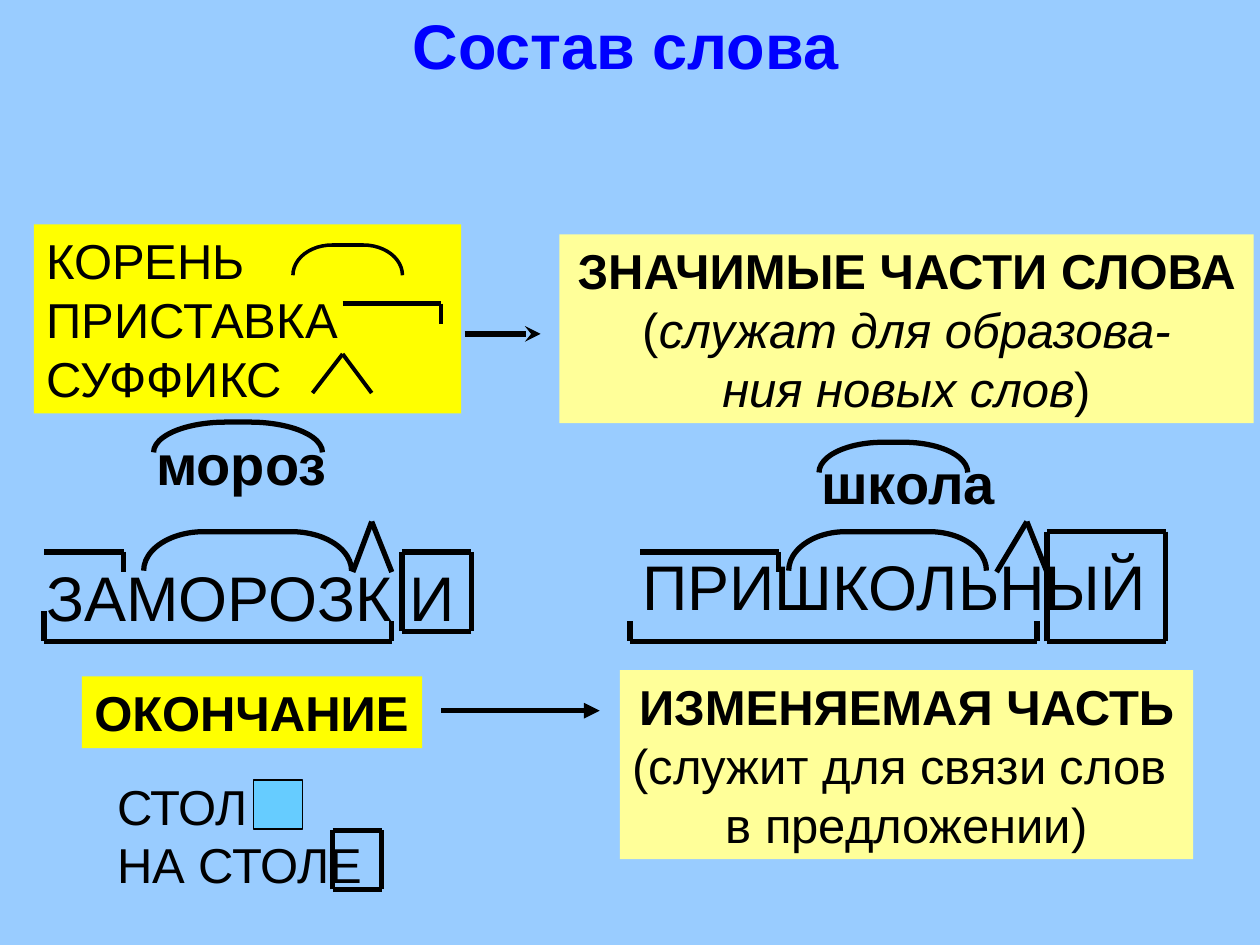
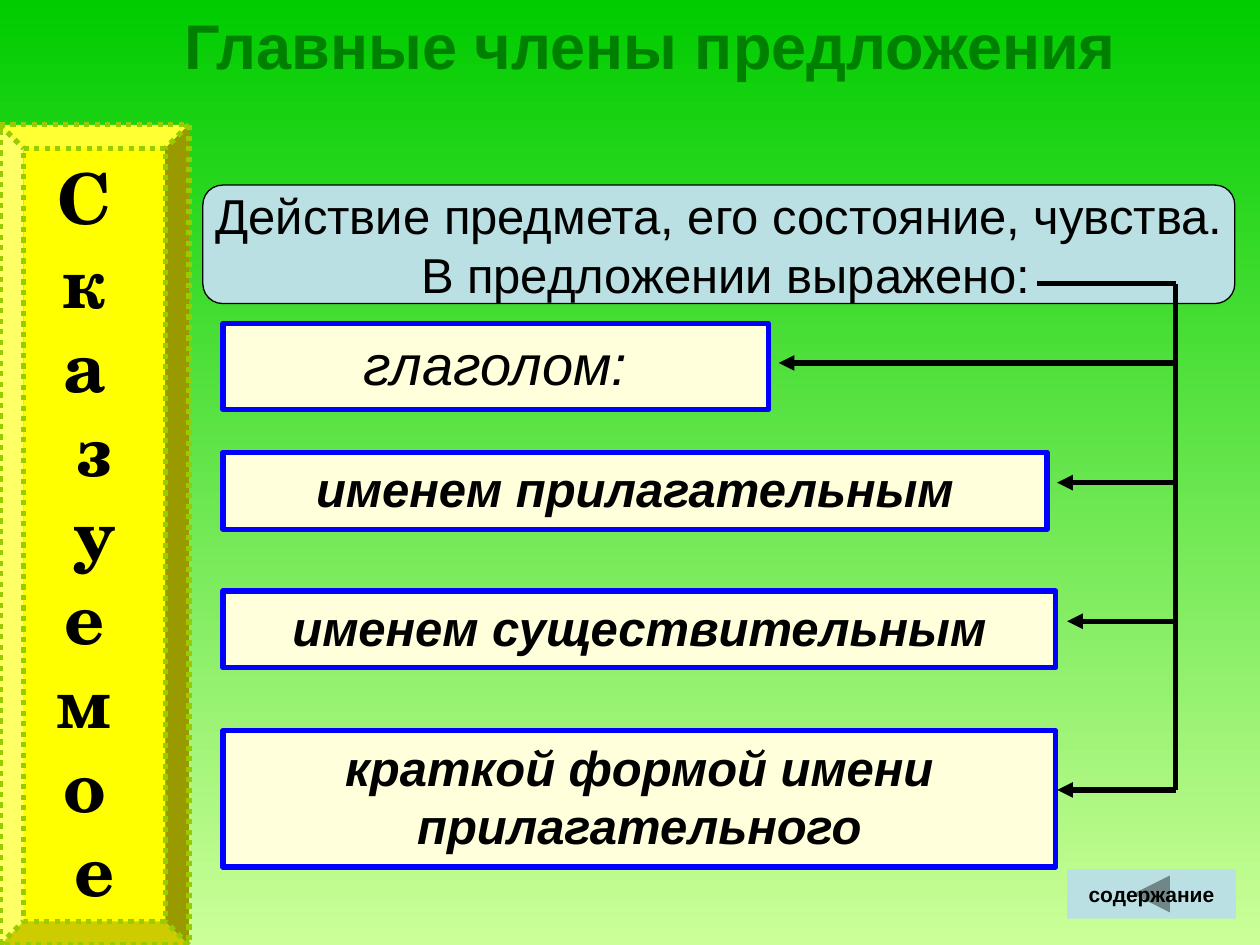
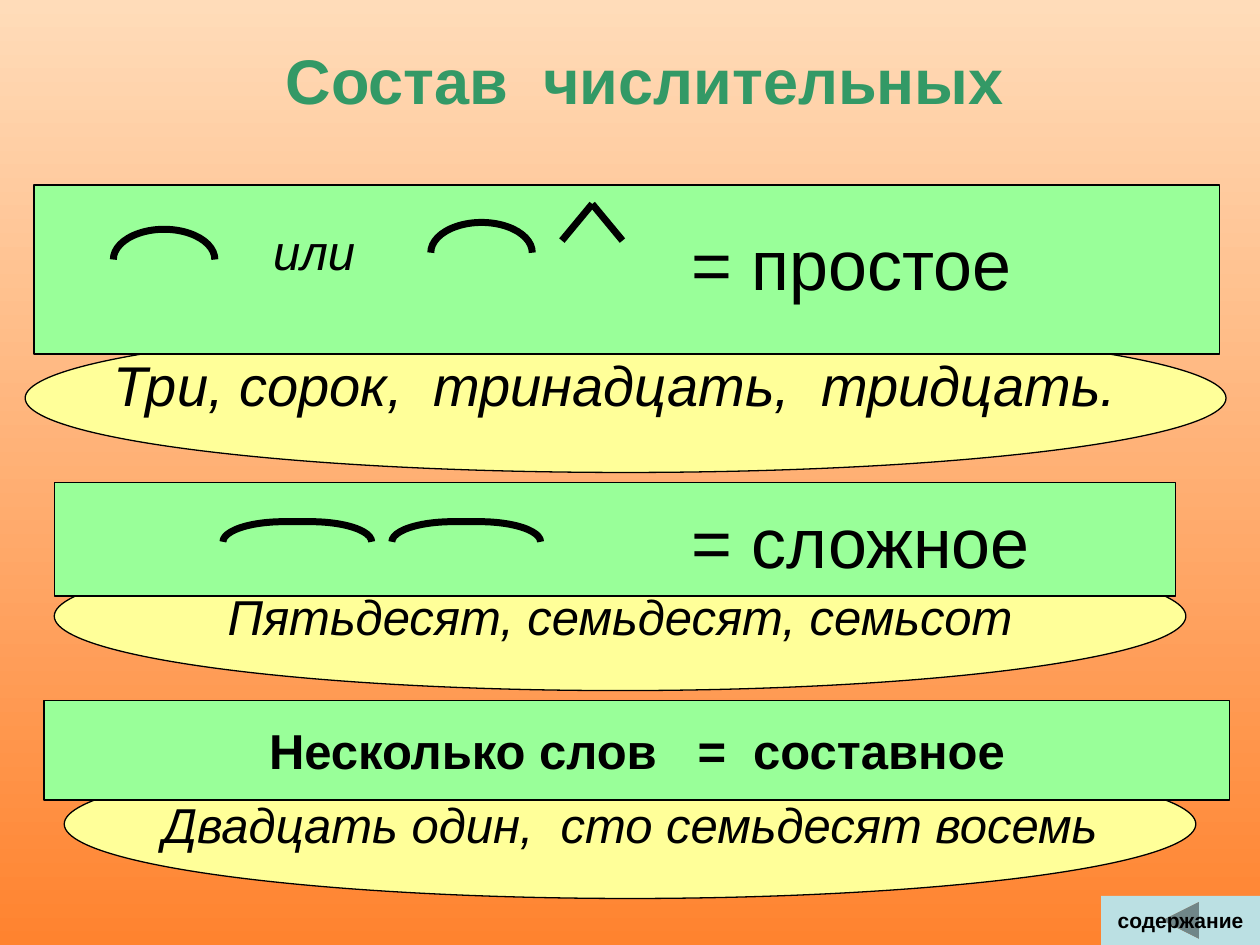
from lxml.etree import SubElement
from pptx import Presentation
from pptx.dml.color import RGBColor
from pptx.enum.dml import MSO_LINE as DASH
from pptx.enum.shapes import MSO_CONNECTOR as LINK, MSO_SHAPE as KIND
from pptx.enum.text import MSO_ANCHOR as ANCHOR, PP_ALIGN as ALIGN
from pptx.oxml.ns import qn
from pptx.util import Pt

BLACK = RGBColor(0x00, 0x00, 0x00)
BLUE = RGBColor(0x00, 0x00, 0xFF)
SKY = RGBColor(0x99, 0xCC, 0xFF)
AQUA = RGBColor(0x66, 0xCC, 0xFF)
ICE = RGBColor(0xBB, 0xE0, 0xE3)
YELLOW = RGBColor(0xFF, 0xFF, 0x00)
CREAM = RGBColor(0xFF, 0xFF, 0x99)
IVORY = RGBColor(0xFF, 0xFF, 0xDB)
OLIVE = RGBColor(0x99, 0xCC, 0x00)
MINT = RGBColor(0x99, 0xFF, 0x99)
FOREST = RGBColor(0x00, 0x80, 0x00)
JADE = RGBColor(0x33, 0x99, 0x66)
GRASS = RGBColor(0x00, 0xCC, 0x00)
LIME = RGBColor(0xCC, 0xFF, 0x99)
PEACH = RGBColor(0xFF, 0xDC, 0xB9)
ORANGE = RGBColor(0xFF, 0x83, 0x2F)

BASE = {"name": "Arial", "size": Pt(28), "bold": False, "italic": False}
BOLD = {"bold": True}
ITALIC = {"italic": True}
HEAD = {"bold": True, "size": Pt(36)}
WORD = {"size": Pt(36)}
ROOT = {"bold": True, "size": Pt(32)}
BIG = {"size": Pt(40)}
SMALL = {"bold": True, "size": Pt(12)}
SIDE = {"bold": True, "size": Pt(40), "name": "TeX Gyre Schola"}


def write(shape, lines, style, align=ALIGN.CENTER, anchor=ANCHOR.TOP, wrap=False, color=BLACK):
    """Fill a shape with paragraphs, each a string or a list of (text, style) runs."""
    frame = shape.text_frame
    frame.word_wrap = wrap
    frame.vertical_anchor = anchor
    for index, line in enumerate(lines):
        para = frame.paragraphs[0] if index == 0 else frame.add_paragraph()
        para.alignment = align
        for text, extra in [(line, {})] if isinstance(line, str) else line:
            run = para.add_run()
            run.text = text
            for key, value in {**BASE, **style, **extra}.items():
                setattr(run.font, key, value)
            run.font.color.rgb = color


def label(slide, area, lines, style, align=ALIGN.LEFT, **rest):
    """Add a text box and return it."""
    shape = slide.shapes.add_textbox(*map(Pt, area))
    write(shape, lines, style, align, **rest)
    return shape


def title(slide, area, text, color):
    """Add the slide title."""
    label(slide, area, [text], HEAD, ALIGN.CENTER, color=color)


def box(slide, area, fill=None, edge=None, weight=0.75, kind=KIND.RECTANGLE):
    """Add a preset shape with the given fill and edge."""
    shape = slide.shapes.add_shape(kind, *map(Pt, area))
    shape.shadow.inherit = False
    for part, color in ((shape.fill, fill), (shape.line.fill, edge)):
        if color is None:
            part.background()
        else:
            part.solid()
            part.fore_color.rgb = color
    if edge is not None:
        shape.line.width = Pt(weight)
    return shape


def arc(slide, left, top, span, rise, bend, weight=3):
    """Draw a root arch inside the given bounds."""
    area = (left + (span - rise) / 2, top + (rise - span) / 2, rise, span)
    shape = box(slide, area, None, BLACK, weight, KIND.RIGHT_BRACKET)
    shape.adjustments[0] = bend
    shape.rotation = 270


def trace(slide, points, weight=3, tip=None):
    """Join points with straight lines, ending in an optional arrowhead."""
    for start, end in zip(points, points[1:]):
        line = slide.shapes.add_connector(LINK.STRAIGHT, *map(Pt, start + end))
        line.line.color.rgb = BLACK
        line.line.width = Pt(weight)
        props = line.element.spPr
        if tip and end == points[-1]:
            SubElement(props.find(qn("a:ln")), qn("a:tailEnd"), type=tip)
        SubElement(props, qn("a:effectLst"))


def frame(slide, left, top, right, bottom):
    """Outline a word ending with four lines."""
    trace(slide, [(left, top), (right, top), (right, bottom), (left, bottom), (left, top)])


def stem(slide, left, right, rise):
    """Mark a word stem with a bracket below it."""
    trace(slide, [(left, rise), (left, 366.5), (right, 366.5), (right, 355)])


def button(slide, left, top, width):
    """Add the button that leads to the contents."""
    shape = box(slide, (left, top, width, 28.1), ICE, kind=KIND.ACTION_BUTTON_BACK_OR_PREVIOUS)
    write(shape, ["содержание"], SMALL, anchor=ANCHOR.MIDDLE)


def blend(slide, top, bottom):
    """Paint the background with a vertical gradient."""
    fill = slide.background.fill
    fill.gradient()
    fill.gradient_angle = 270
    for stop, color in zip(fill.gradient_stops, (top, bottom)):
        stop.color.rgb = color


def parts(slide):
    """Build the slide on the parts of a word."""
    fill = slide.background.fill
    fill.solid()
    fill.fore_color.rgb = SKY
    title(slide, (150.5, 0, 414, 73.4), "Состав слова", BLUE)

    trace(slide, [(265.7, 190.8), (308.9, 190.8)], tip="stealth")
    trace(slide, [(252, 406.1), (342.7, 406.1)], tip="triangle")
    notes = (
        ((319.7, 133.9, 396.7, 108), CREAM, ALIGN.CENTER, [
            [("ЗНАЧИМЫЕ ЧАСТИ СЛОВА", BOLD)],
            [("(", {}), ("служат для образова-", ITALIC)],
            [("ния новых слов", ITALIC), (")", {})]]),
        ((46.8, 386.6, 194.4, 41), YELLOW, ALIGN.LEFT, [[("ОКОНЧАНИЕ", BOLD)]]),
        ((354.2, 383, 327.6, 108), CREAM, ALIGN.CENTER, [
            [("ИЗМЕНЯЕМАЯ ЧАСТЬ", BOLD)], "(служит для связи слов ", "в предложении)"]),
        ((19.4, 128.2, 244.1, 108), YELLOW, ALIGN.LEFT, ["КОРЕНЬ", "ПРИСТАВКА", "СУФФИКС"]),
    )
    for area, color, align, lines in notes:
        write(box(slide, area, color), lines, {}, align)

    arc(slide, 167.4, 140, 62.6, 17.3, 1.29, 2)
    trace(slide, [(195.8, 173.5), (252, 173.5), (252, 185)], 2.5)
    trace(slide, [(178.6, 224.6), (195.8, 202.3), (212.4, 224.6)], 2.25)

    label(slide, (59.8, 439.9, 181.4, 74.2), ["СТОЛ", "НА СТОЛЕ"], {}, wrap=True)
    frame(slide, 190.1, 474.5, 218.2, 508.3)
    box(slide, (144.7, 445.7, 28.1, 28.1), AQUA, BLACK)

    label(slide, (19.4, 315.4, 251.3, 50.4), ["ЗАМОРОЗК И"], WORD, wrap=True)
    trace(slide, [(25.2, 315.4), (70.6, 315.4), (70.6, 326.9)])
    arc(slide, 82.1, 303.8, 118.8, 22.3, 1.55)
    trace(slide, [(201.6, 326.9), (212.4, 298.1), (223.9, 326.9)])
    frame(slide, 229.7, 315.4, 269.3, 360.7)
    stem(slide, 25.2, 223.9, 349.2)

    label(slide, (360, 309.6, 303.1, 50.4), ["ПРИШКОЛЬНЫЙ"], WORD)
    trace(slide, [(365.8, 315.4), (445, 315.4), (445, 326.9)])
    arc(slide, 450.7, 303.8, 113, 22.3, 1.47)
    trace(slide, [(569.5, 326.9), (586.8, 298.1), (598.3, 326.9)])
    frame(slide, 598.3, 303.8, 666, 366.5)
    stem(slide, 360, 592.6, 355)

    label(slide, (82.1, 241.9, 112.3, 45.4), ["мороз"], ROOT)
    arc(slide, 87.8, 241.2, 96.5, 17.3, 2.4)
    label(slide, (462.2, 252.7, 114.5, 45.4), ["школа"], ROOT)
    arc(slide, 468, 252.7, 85, 17.3, 2.12)


def verbs(slide):
    """Build the slide on the predicate."""
    blend(slide, GRASS, LIME)
    side = box(slide, (0, 71.3, 108, 468.7), YELLOW, OLIVE, 3, KIND.BEVEL)
    side.adjustments[0] = 0.125
    side.line.dash_style = DASH.ROUND_DOT
    write(side, ["С ", "к ", "а ", "з", " у ", "е ", "м ", "о ", "е"], SIDE, wrap=True)
    title(slide, (42.5, 0, 658.1, 85), "Главные члены предложения", FOREST)
    top = box(slide, (115.9, 105.8, 589.7, 67.7), ICE, BLACK, kind=KIND.ROUNDED_RECTANGLE)
    write(top, ["Действие предмета, его состояние, чувства.", " В предложении выражено:"],
          {}, anchor=ANCHOR.MIDDLE)

    trunk, strong = 671.8, {"bold": True, "italic": True}
    bars = (
        ("глаголом:", 185, 311.8, 49, {"italic": True, "size": Pt(32)}, 445, 207.4),
        ("именем прилагательным", 258.5, 470.9, 43.9, strong, 604.1, 275.8),
        ("именем существительным", 337.7, 475.9, 43.9, strong, 609.8, 355),
        ("краткой формой имени прилагательного", 417.6, 475.9, 77.8, strong, 604.1, 451.4),
    )
    for text, y, width, height, style, tip, level in bars:
        bar = box(slide, (127.4, y, width, height), IVORY, BLUE, 3)
        write(bar, [text], style, wrap=True)
        trace(slide, [(trunk, level), (tip, level)], tip="triangle")
    trace(slide, [(592.6, 162), (trunk, 162), (trunk, 451.4)])
    button(slide, 609.8, 496.8, 96.5)


def counts(slide):
    """Build the slide on the make-up of numerals."""
    blend(slide, PEACH, ORANGE)
    title(slide, (87.8, 20.2, 561.6, 73.4), "Состав  числительных", JADE)
    ovals = (
        ((31, 309.6, 646.6, 85), "Пятьдесят, семьдесят, семьсот"),
        ((14.4, 185, 686.2, 85), None),
        ((36.7, 428.4, 646.6, 85), "Двадцать один,  сто семьдесят восемь"),
    )
    for area, text in ovals:
        oval = box(slide, area, CREAM, BLACK, kind=KIND.OVAL)
        if text:
            write(oval, [text], ITALIC, anchor=ANCHOR.MIDDLE)
    some = label(slide, (31, 196.6, 629.3, 45.4), ["Три, сорок,  тринадцать,  тридцать."],
                 {"italic": True, "size": Pt(32)}, wrap=True)
    some.text_frame.margin_left = Pt(33.9)

    bands = ((19.4, 105.8, 677.5, 96.5), (31, 275.8, 640.8, 64.8), (25.2, 400.3, 677.5, 56.9))
    for area in bands:
        band = box(slide, area, MINT, BLACK)
    write(band, ["Несколько слов   =  составное"], BOLD, anchor=ANCHOR.MIDDLE)

    label(slide, (149, 123.1, 69.1, 41), ["или"], ITALIC)
    label(slide, (388.1, 122.4, 254.9, 55.4), ["= простое"], BIG, wrap=True)
    label(slide, (388.1, 281.5, 208.1, 55.4), ["= сложное"], BIG)
    for left, y in ((64.8, 131), (246.2, 127.1)):
        arc(slide, left, y, 58, 17.3, 1.68, 4)
    trace(slide, [(321.1, 137.5), (338.4, 116.6), (355.7, 137.5)], 4)
    for left in (127.4, 223.9):
        arc(slide, left, 298.1, 85, 11.5, 3.03, 4)
    button(slide, 629.3, 511.9, 90.7)


def main():
    """Build the deck and save it."""
    deck = Presentation()
    deck.slide_width, deck.slide_height = Pt(720), Pt(540)
    for build in (parts, verbs, counts):
        build(deck.slides.add_slide(deck.slide_layouts[6]))
    deck.save("out.pptx")


if __name__ == "__main__":
    main()
